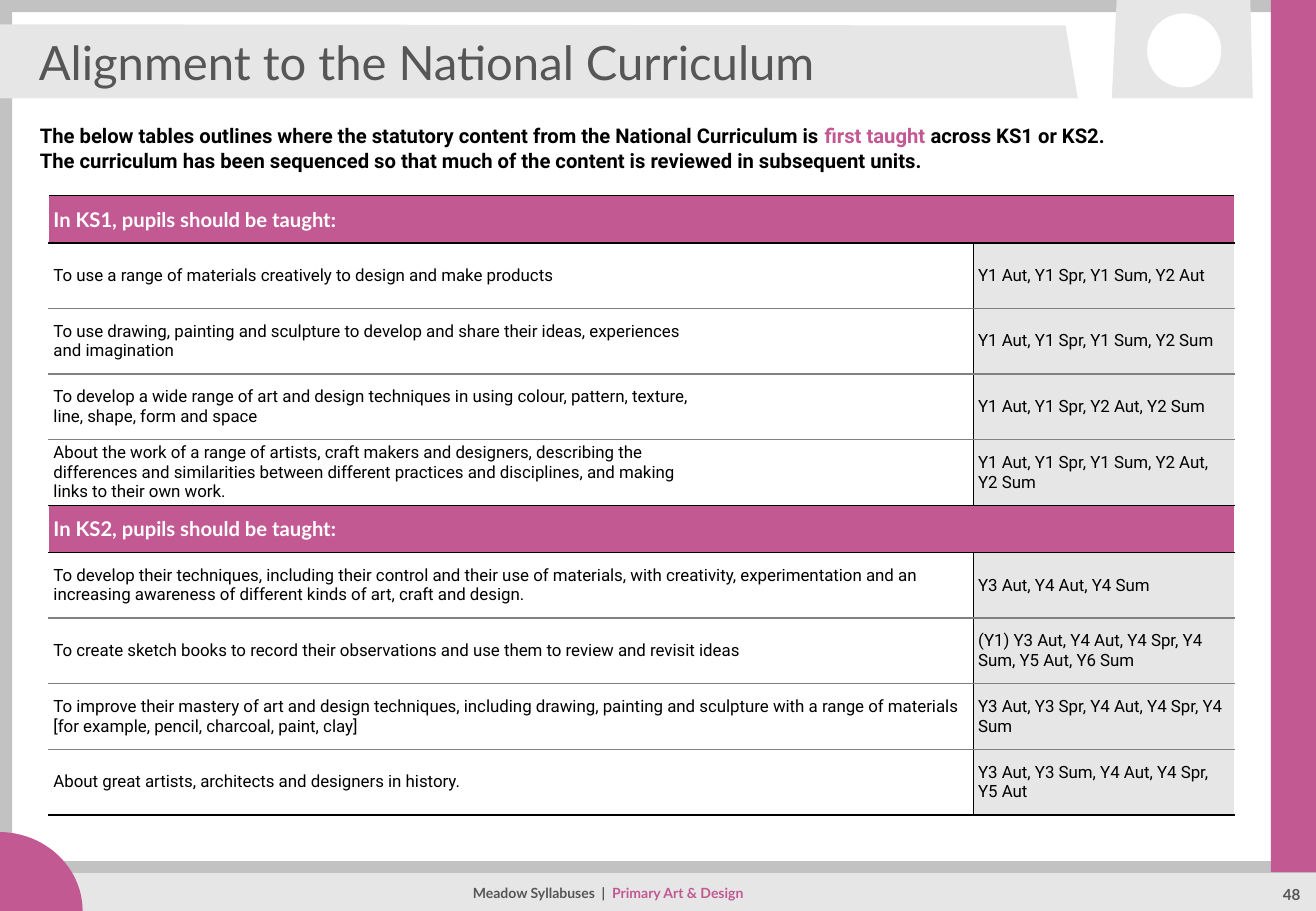
from lxml.etree import SubElement
from pptx import Presentation
from pptx.dml.color import RGBColor
from pptx.enum.shapes import MSO_CONNECTOR, MSO_SHAPE
from pptx.enum.text import MSO_ANCHOR, MSO_AUTO_SIZE, PP_ALIGN
from pptx.oxml.ns import qn
from pptx.util import Inches, Pt

PINK = RGBColor(0xC3, 0x59, 0x93)
SILVER = RGBColor(0xC2, 0xC2, 0xC2)
PALE = RGBColor(0xE6, 0xE6, 0xE6)
SLATE = RGBColor(0x56, 0x56, 0x56)
RULE = RGBColor(0x80, 0x80, 0x80)
WHITE = RGBColor(0xFF, 0xFF, 0xFF)
BLACK = RGBColor(0, 0, 0)

WIDTH, HEIGHT = 10.83, 7.5
HEADER_ROW, CONTENT_ROW = 0.39, 0.54
COLUMNS = (7.61, 2.15)

SECTIONS = [
    ("In KS1, pupils should be taught:", [
        ("To use a range of materials creatively to design and make products",
         "Y1 Aut, Y1 Spr, Y1 Sum, Y2 Aut"),
        ("To use drawing, painting and sculpture to develop and share their ideas, experiences\n"
         "and imagination",
         "Y1 Aut, Y1 Spr, Y1 Sum, Y2 Sum"),
        ("To develop a wide range of art and design techniques in using colour, pattern, texture,\n"
         "line, shape, form and space",
         "Y1 Aut, Y1 Spr, Y2 Aut, Y2 Sum"),
        ("About the work of a range of artists, craft makers and designers, describing the\n"
         "differences and similarities between different practices and disciplines, and making\n"
         "links to their own work.",
         "Y1 Aut, Y1 Spr, Y1 Sum, Y2 Aut, Y2 Sum"),
    ]),
    ("In KS2, pupils should be taught:", [
        ("To develop their techniques, including their control and their use of materials, "
         "with creativity, experimentation and an increasing awareness of different kinds "
         "of art, craft and design.",
         "Y3 Aut, Y4 Aut, Y4 Sum"),
        ("To create sketch books to record their observations and use them to review and revisit ideas",
         "(Y1) Y3 Aut, Y4 Aut, Y4 Spr, Y4 Sum, Y5 Aut, Y6 Sum"),
        ("To improve their mastery of art and design techniques, including drawing, painting "
         "and sculpture with a range of materials [for example, pencil, charcoal, paint, clay]",
         "Y3 Aut, Y3 Spr, Y4 Aut, Y4 Spr, Y4 Sum"),
        ("About great artists, architects and designers in history.",
         "Y3 Aut, Y3 Sum, Y4 Aut, Y4 Spr, Y5 Aut"),
    ]),
]


def write(para, text, size, font, color, bold=False):
    span = para.add_run()
    span.text = text
    span.font.size = Pt(size)
    span.font.name = font
    span.font.color.rgb = color
    span.font.bold = bold


def style_cell(cell, text, size, font, color, bold, fill, borders):
    cell.vertical_anchor = MSO_ANCHOR.MIDDLE
    cell.margin_left = cell.margin_right = Inches(0.04)
    cell.margin_top = cell.margin_bottom = Inches(0.02)
    for index, line in enumerate(text.split("\n") if text else []):
        frame = cell.text_frame
        para = frame.add_paragraph() if index else frame.paragraphs[0]
        write(para, line, size, font, color, bold)
    properties = cell._tc.get_or_add_tcPr()
    for side, border_color in zip("LRTB", borders):
        border = SubElement(properties, qn(f"a:ln{side}"), w=str(Pt(1)))
        solid = SubElement(border, qn("a:solidFill"))
        SubElement(solid, qn("a:srgbClr"), val=str(border_color))
    cell.fill.solid()
    cell.fill.fore_color.rgb = fill


deck = Presentation()
deck.slide_width, deck.slide_height = Inches(WIDTH), Inches(HEIGHT)
page = deck.slides.add_slide(deck.slide_layouts[5])
shapes = page.shapes

frame = shapes.add_shape(MSO_SHAPE.FRAME, 0, 0, Inches(WIDTH), Inches(HEIGHT))
frame.adjustments[0] = 0.1 / HEIGHT
footer = shapes.add_shape(MSO_SHAPE.RECTANGLE, Inches(0.32), Inches(7.18),
                          Inches(WIDTH - 0.32), Inches(HEIGHT - 7.18))

footer_rule = shapes.add_connector(MSO_CONNECTOR.STRAIGHT, Inches(0.05), Inches(7.14),
                                   Inches(WIDTH), Inches(7.14))
footer_rule.line.color.rgb = SILVER
footer_rule.line.width = Pt(7)
SubElement(footer_rule._element.spPr, qn("a:effectLst"))

corner = shapes.add_shape(MSO_SHAPE.ARC, Inches(-0.7), Inches(6.85), Inches(1.38), Inches(1.3))
side_bar = shapes.add_shape(MSO_SHAPE.RECTANGLE, Inches(10.46), 0,
                            Inches(WIDTH - 10.46), Inches(7.18))

outlines = []
for points in ([(0, 20), (0, 81), (887, 81), (877, 21)],
               [(915, 81), (1031, 81), (1029, 0), (919, 0)]):
    builder = shapes.build_freeform(*points[0], scale=Inches(0.01))
    builder.add_line_segments(points[1:], close=True)
    outlines.append(builder.convert_to_shape())
title_band, keystone = outlines
disc = shapes.add_shape(MSO_SHAPE.OVAL, Inches(9.44), Inches(0.11), Inches(0.61), Inches(0.61))

for shape, color in ((frame, SILVER), (footer, PALE), (corner, PINK), (side_bar, PINK),
                     (title_band, PALE), (keystone, PALE), (disc, WHITE)):
    shape.shadow.inherit = False
    shape.fill.solid()
    shape.fill.fore_color.rgb = color
    shape.line.fill.background()

title = shapes.title
title.element.getparent().append(title.element)
title.left, title.top, title.width, title.height = map(Inches, (0.22, 0.26, 8.81, 0.5))
title.text_frame.auto_size = MSO_AUTO_SIZE.NONE
title.text_frame.vertical_anchor = MSO_ANCHOR.MIDDLE
title_para = title.text_frame.paragraphs[0]
title_para.alignment = PP_ALIGN.LEFT
write(title_para, "Alignment to the National Curriculum", 28, "Lato", SLATE)

intro = shapes.add_textbox(Inches(0.23), Inches(0.97), Inches(9.07), Inches(0.5))
intro.text_frame.word_wrap = True
for text, color in (
    ("The below tables outlines where the statutory content from the National Curriculum is ", BLACK),
    ("first taught ", PINK),
    ("across KS1 or KS2. The curriculum has been sequenced so that much of the content "
     "is reviewed in subsequent units.", BLACK),
):
    write(intro.text_frame.paragraphs[0], text, 12, "Roboto", color, True)

footer_box = shapes.add_textbox(Inches(2.05), Inches(7.21), Inches(5.91), Inches(0.29))
footer_box.text_frame.word_wrap = True
footer_box.text_frame.vertical_anchor = MSO_ANCHOR.MIDDLE
footer_para = footer_box.text_frame.paragraphs[0]
footer_para.alignment = PP_ALIGN.CENTER
write(footer_para, "Meadow Syllabuses  |  ", 8.3, "Lato", SLATE, True)
write(footer_para, "Primary Art & Design", 8.3, "Lato", PINK, True)

number_box = shapes.add_textbox(Inches(10.43), Inches(7.21), Inches(0.4), Inches(0.28))
number_box.text_frame.word_wrap = True
number_box.text_frame.margin_left = number_box.text_frame.margin_right = 0
number_para = number_box.text_frame.paragraphs[0]
number_para.alignment = PP_ALIGN.CENTER
number_para.line_spacing = 1.2
write(number_para, "48", 9, "Lato", SLATE, True)

row_count = sum(1 + len(entries) for _, entries in SECTIONS)
table_height = len(SECTIONS) * HEADER_ROW + (row_count - len(SECTIONS)) * CONTENT_ROW
table = shapes.add_table(row_count, len(COLUMNS), Inches(0.4), Inches(1.61),
                         Inches(sum(COLUMNS)), Inches(table_height)).table
table.first_row = table.horz_banding = False
for column, width in zip(table.columns, COLUMNS):
    column.width = Inches(width)

row = 0
for heading, entries in SECTIONS:
    table.rows[row].height = Inches(HEADER_ROW)
    table.cell(row, 0).merge(table.cell(row, 1))
    for column, text in enumerate((heading, "")):
        style_cell(table.cell(row, column), text, 12, "Lato", WHITE, True, PINK,
                   (WHITE, WHITE, BLACK, BLACK))
    row += 1
    for index, (content, terms) in enumerate(entries):
        table.rows[row].height = Inches(CONTENT_ROW)
        top = RULE if index else BLACK
        bottom = RULE if index < len(entries) - 1 else BLACK
        style_cell(table.cell(row, 0), content, 10, "Roboto", BLACK, False, WHITE,
                   (WHITE, BLACK, top, bottom))
        style_cell(table.cell(row, 1), terms, 10, "Roboto", BLACK, False, PALE,
                   (BLACK, WHITE, top, bottom))
        row += 1

deck.save("out.pptx")
